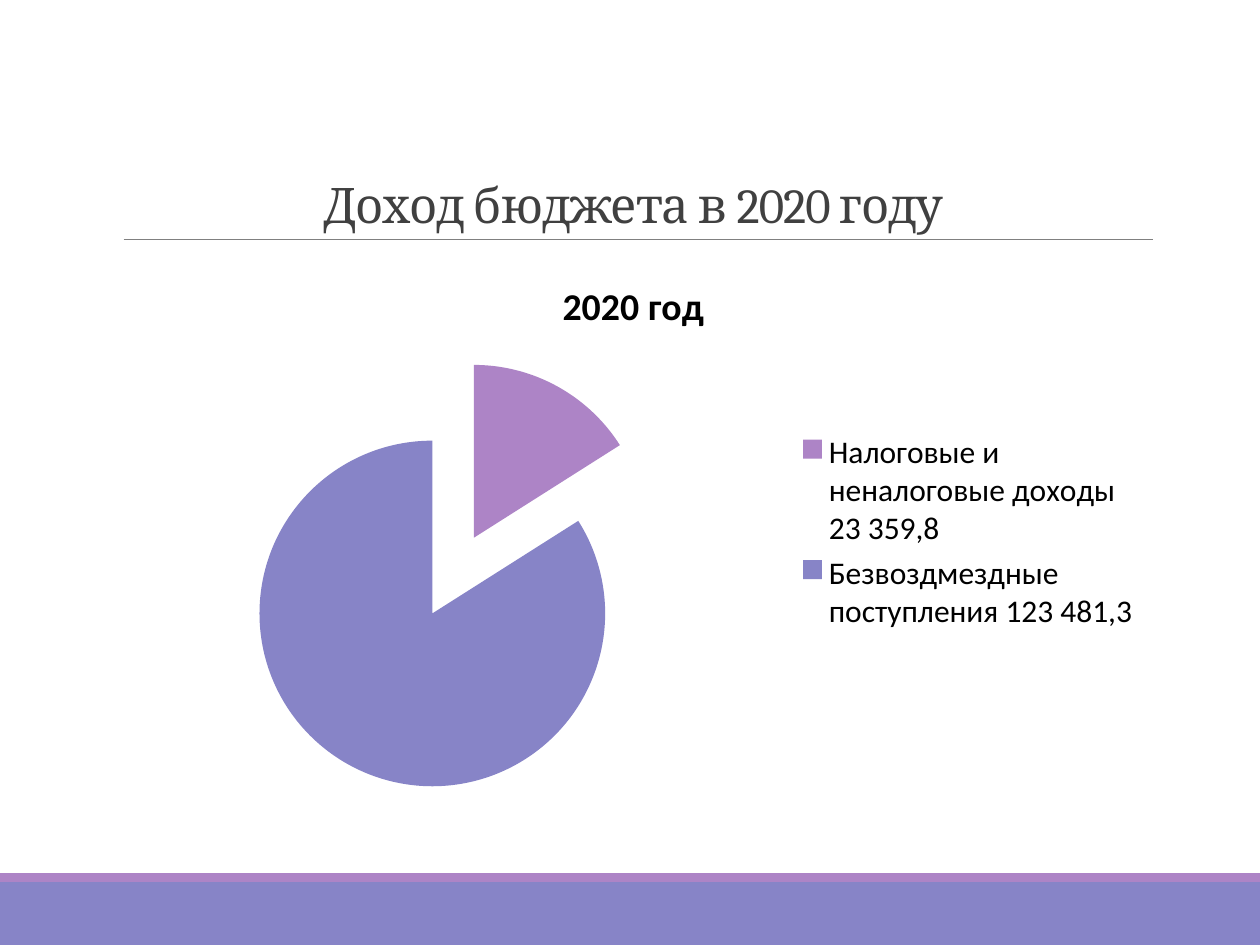
"""Build the 2020 budget income slide with a pie chart."""
from lxml.etree import SubElement as Sub
from pptx import Presentation
from pptx.chart.data import CategoryChartData as Data
from pptx.dml.color import RGBColor
from pptx.enum.chart import XL_CHART_TYPE as Kind, XL_LEGEND_POSITION as Side
from pptx.enum.shapes import MSO_CONNECTOR as Join, MSO_SHAPE as Form
from pptx.enum.text import MSO_ANCHOR as Anchor, PP_ALIGN as Align
from pptx.oxml.ns import qn
from pptx.util import Cm, Pt

BLUE = RGBColor(0x87, 0x84, 0xC7)
PLUM = RGBColor(0xAD, 0x84, 0xC6)
GREY = RGBColor(0x80, 0x80, 0x80)
DARK = RGBColor(0x40, 0x40, 0x40)
BLACK = RGBColor(0, 0, 0)

TITLE = "Доход бюджета в 2020 году"
NAME = "2020 год"
PARTS = [
    ("Налоговые и неналоговые доходы 23 359,8", 16, PLUM),
    ("Безвоздмездные поступления 123 481,3", 84, BLUE),
]
WIDE, HIGH = 25.4, 19.05
LEFT, SPAN = 2.29, 20.96
BANDS = [(17.78, 1.27, BLUE), (17.6, 0.18, PLUM)]
RULE = (2.49, 23.24, 4.83)
HEAD = {"size": Pt(28), "name": "Cambria"}
BODY = {"size": Pt(18), "name": "Calibri"}
BOLD = {"size": Pt(21.6), "name": "Calibri", "bold": True}


def style(font, form, hue):
    for key, val in form.items():
        setattr(font, key, val)
    font.color.rgb = hue


def add_bands(shapes):
    for top, tall, hue in BANDS:
        band = shapes.add_shape(Form.RECTANGLE, 0, Cm(top), Cm(WIDE), Cm(tall))
        band.shadow.inherit = False
        band.fill.solid()
        band.fill.fore_color.rgb = hue
        band.line.fill.background()


def add_rule(shapes):
    start, end, y = map(Cm, RULE)
    rule = shapes.add_connector(Join.STRAIGHT, start, y, end, y)
    rule.line.color.rgb = GREY
    rule.line.width = Pt(0.5)
    Sub(rule._element.spPr, qn("a:effectLst"))


def add_title(shapes):
    box = shapes.add_textbox(Cm(LEFT), Cm(0.79), Cm(SPAN), Cm(4.04))
    frame = box.text_frame
    frame.word_wrap = True
    frame.vertical_anchor = Anchor.BOTTOM
    para = frame.paragraphs[0]
    para.alignment = Align.CENTER
    para.line_spacing = 0.85
    run = para.add_run()
    run.text = TITLE
    style(run.font, HEAD, DARK)
    run.font._element.set("spc", "-50")


def add_pie(shapes):
    data = Data()
    data.categories = [part[0] for part in PARTS]
    data.add_series(NAME, [part[1] for part in PARTS])
    chart = shapes.add_chart(
        Kind.PIE_EXPLODED, Cm(LEFT), Cm(5.13), Cm(SPAN), Cm(11.18), data
    ).chart
    style(chart.font, BODY, BLACK)
    chart.has_title = True
    run = chart.chart_title.text_frame.paragraphs[0].add_run()
    run.text = NAME
    style(run.font, BOLD, BLACK)
    chart.has_legend = True
    chart.legend.position = Side.RIGHT
    chart.legend.include_in_layout = False
    style(chart.legend.font, BODY, BLACK)
    plot = chart.plots[0]
    plot.vary_by_categories = True
    row = plot.series[0]
    for node in row._element.findall(qn("c:explosion")):
        node.set("val", "25")
    for i, part in enumerate(PARTS):
        point = row.points[i]
        point.format.fill.solid()
        point.format.fill.fore_color.rgb = part[2]


def main():
    deck = Presentation()
    deck.slide_width, deck.slide_height = Cm(WIDE), Cm(HIGH)
    shapes = deck.slides.add_slide(deck.slide_layouts[6]).shapes
    for add in (add_bands, add_rule, add_title, add_pie):
        add(shapes)
    deck.save("out.pptx")


if __name__ == "__main__":
    main()
